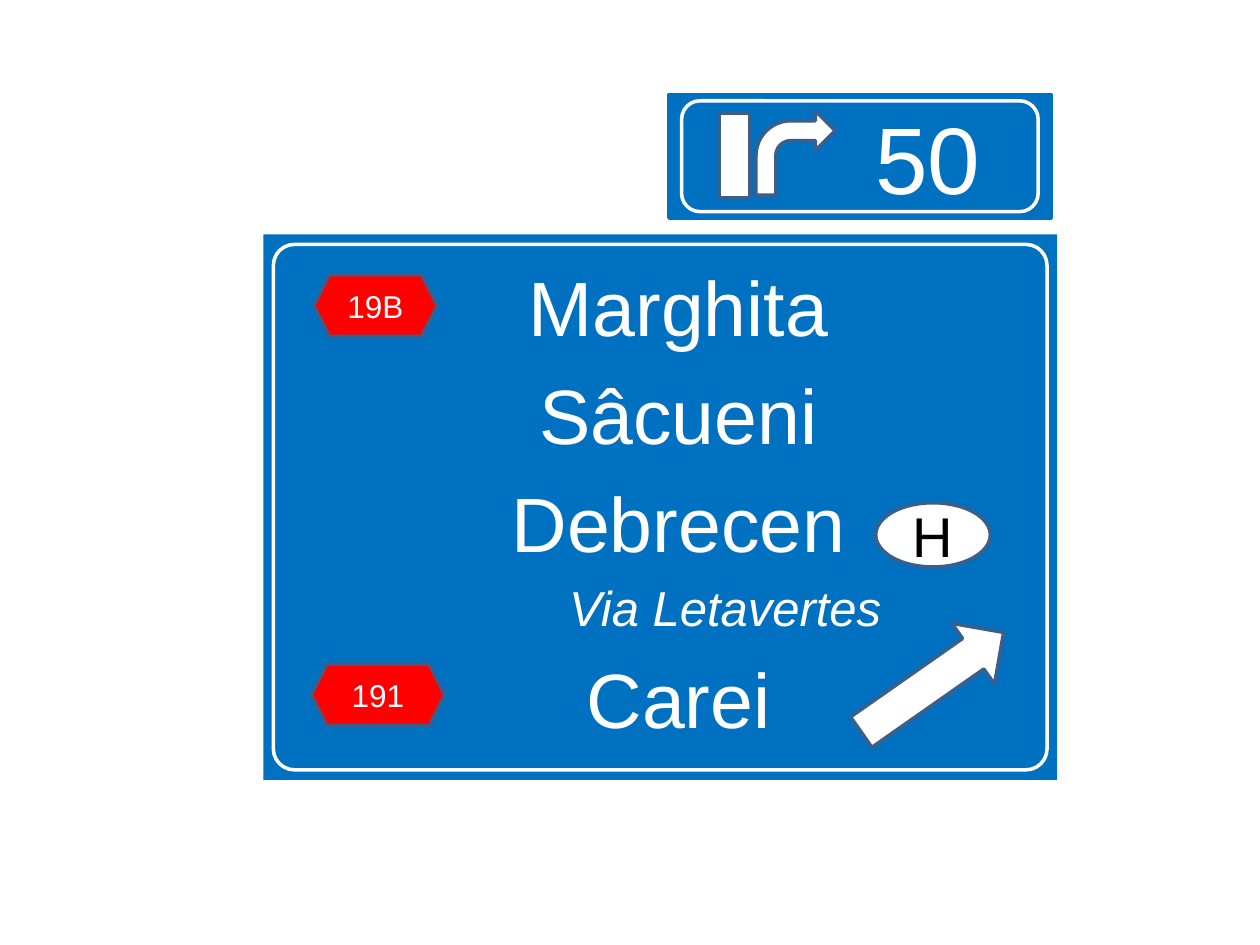
from dataclasses import dataclass
from typing import Optional

from pptx import Presentation
from pptx.dml.color import RGBColor
from pptx.enum.shapes import MSO_SHAPE as Preset
from pptx.enum.text import MSO_ANCHOR as Anchor, MSO_AUTO_SIZE as AutoSize, PP_ALIGN as Align
from pptx.util import Inches, Pt

BLUE, RED, WHITE, BLACK, EDGE = "0070C0", "FF0000", "FFFFFF", "000000", "3A5F8C"


@dataclass
class SignPart:
    preset: Preset
    box: tuple[float, float, float, float]
    fill: Optional[str] = WHITE
    line: str = EDGE
    text: str = ""
    size: int = 18
    color: str = WHITE
    left_inset: float = 0.1
    rotation: float = 0
    adjustments: tuple[float, ...] = ()


@dataclass
class Destination:
    name: str
    size: int = 44
    italic: bool = False
    indent: float = 0


DESTINATIONS = [
    Destination("Marghita"),
    Destination("Sâcueni"),
    Destination("Debrecen"),
    Destination("Via Letavertes", size=28, italic=True, indent=0.74),
    Destination("Carei"),
]

PARTS = [
    SignPart(Preset.RIGHT_ARROW, (6.71, 5.12, 1.38, 0.59), rotation=325),
    SignPart(Preset.HEXAGON, (2.49, 2.18, 0.98, 0.49), RED, text="19B"),
    SignPart(Preset.HEXAGON, (2.47, 5.27, 1.06, 0.49), RED, text="191"),
    SignPart(Preset.ROUNDED_RECTANGLE, (2.17, 1.94, 6.14, 4.17), None, WHITE,
             adjustments=(0.04,)),
    SignPart(Preset.ROUNDED_RECTANGLE, (5.31, 0.75, 3.03, 0.98), BLUE, BLUE,
             text="50", size=54, left_inset=1.18, adjustments=(0,)),
    SignPart(Preset.ROUNDED_RECTANGLE, (5.41, 0.8, 2.83, 0.88), None, WHITE),
    SignPart(Preset.RECTANGLE, (5.71, 0.9, 0.24, 0.67)),
    SignPart(Preset.BENT_ARROW, (6, 0.88, 0.63, 0.67),
             adjustments=(0.25, 0.25, 0.25, 0.44)),
    SignPart(Preset.OVAL, (6.95, 3.99, 0.91, 0.51), text="H", size=32, color=BLACK),
]


def paint(color_format, color: str) -> None:
    color_format.rgb = RGBColor.from_string(color)


def format_paragraph(paragraph, text: str, size: int, color: str) -> None:
    paragraph.text = text
    paragraph.alignment = Align.CENTER
    paragraph.font.name = "Arial"
    paragraph.font.size = Pt(size)
    paint(paragraph.font.color, color)


def fill_main_panel(panel) -> None:
    panel.left, panel.top = Inches(2.09), Inches(1.86)
    panel.width, panel.height = Inches(6.3), Inches(4.33)
    panel.fill.solid()
    paint(panel.fill.fore_color, BLUE)
    frame = panel.text_frame
    frame.auto_size = AutoSize.NONE
    frame.vertical_anchor = Anchor.TOP
    frame.margin_left, frame.margin_top = Inches(0.39), Inches(0.2)
    frame.margin_right, frame.margin_bottom = Inches(0.1), Inches(0.24)
    for index, destination in enumerate(DESTINATIONS):
        paragraph = frame.add_paragraph() if index else frame.paragraphs[0]
        format_paragraph(paragraph, destination.name, destination.size, WHITE)
        paragraph.font.italic = destination.italic
        if destination.indent:
            paragraph._p.get_or_add_pPr().set("marL", str(Inches(destination.indent)))


def draw_part(slide, part: SignPart) -> None:
    shape = slide.shapes.add_shape(part.preset, *map(Inches, part.box))
    shape.shadow.inherit = False
    shape.rotation = part.rotation
    for index, value in enumerate(part.adjustments):
        shape.adjustments[index] = value
    if part.fill:
        shape.fill.solid()
        paint(shape.fill.fore_color, part.fill)
    else:
        shape.fill.background()
    paint(shape.line.color, part.line)
    shape.line.width = Pt(2)
    if part.text:
        frame = shape.text_frame
        frame.vertical_anchor = Anchor.MIDDLE
        frame.margin_left = Inches(part.left_inset)
        format_paragraph(frame.paragraphs[0], part.text, part.size, part.color)


def main() -> None:
    presentation = Presentation()
    presentation.slide_width, presentation.slide_height = Inches(10), Inches(7.5)
    slide = presentation.slides.add_slide(presentation.slide_layouts[0])
    title = slide.shapes.title._element
    title.getparent().remove(title)
    fill_main_panel(slide.placeholders[1])
    for part in PARTS:
        draw_part(slide, part)
    presentation.save("out.pptx")


if __name__ == "__main__":
    main()
